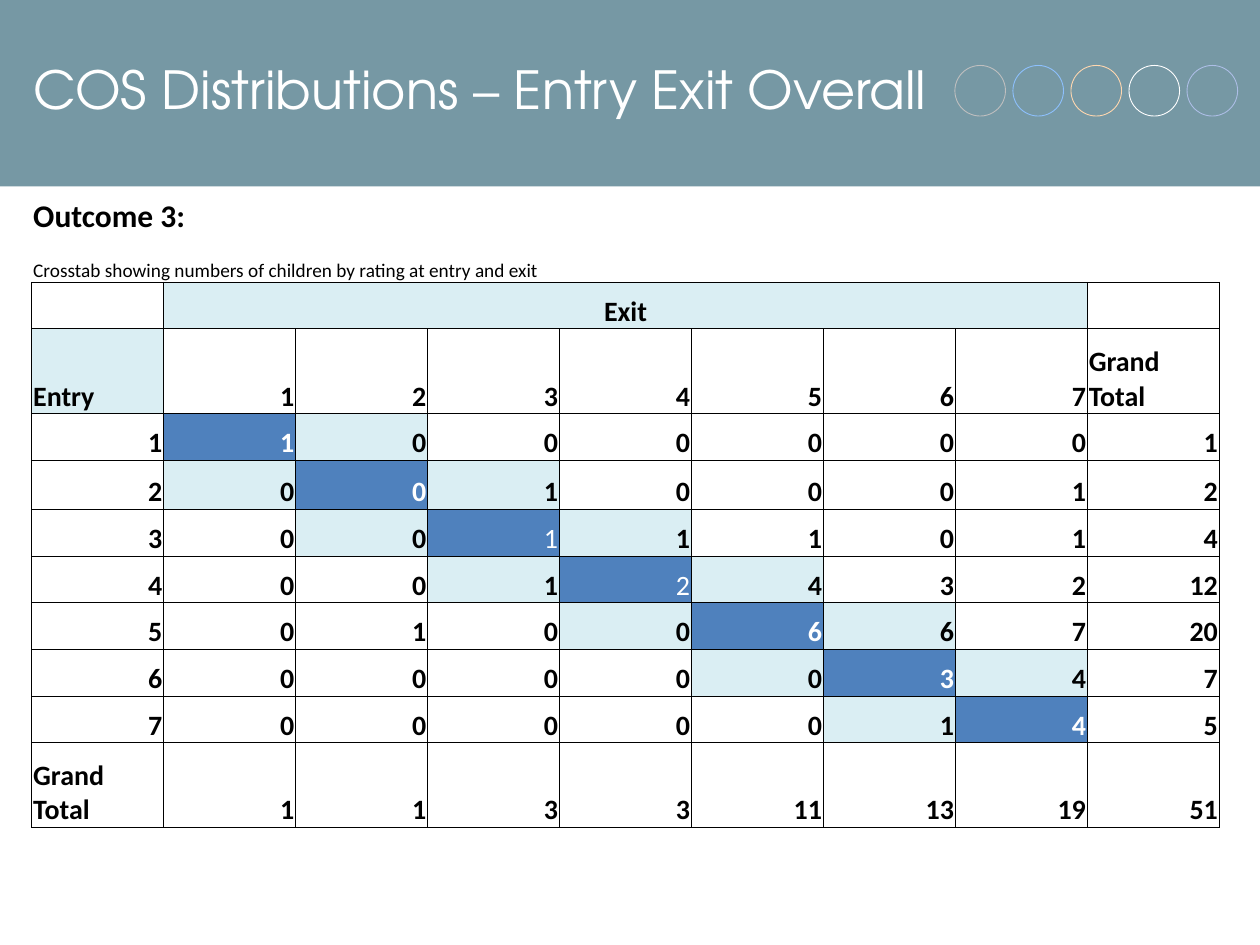
from lxml import etree
from pptx import Presentation
from pptx.dml.color import RGBColor
from pptx.enum.shapes import MSO_SHAPE as Shape
from pptx.enum.text import MSO_ANCHOR as Anchor, PP_ALIGN as Align
from pptx.oxml.ns import qn
from pptx.util import Cm, Pt

COLORS = {
    "band": "7698A4", "white": "FFFFFF", "black": "000000",
    "same": "4F81BD", "near": "DAEEF3",
    "grey": "BFBFBF", "sky": "8DC0FD", "peach": "FFD7AF", "lilac": "ADBEE6",
}
PLAIN_TABLE = "{2D5ABB26-0587-4C30-8999-92F81FD0307C}"
# Rows are ratings at entry, columns are ratings at exit.
COUNTS = [
    [1, 0, 0, 0, 0, 0, 0],
    [0, 0, 1, 0, 0, 0, 1],
    [0, 0, 1, 1, 1, 0, 1],
    [0, 0, 1, 2, 4, 3, 2],
    [0, 1, 0, 0, 6, 6, 7],
    [0, 0, 0, 0, 0, 3, 4],
    [0, 0, 0, 0, 0, 1, 4],
]
RATINGS = list(range(1, 8))
LIGHT_DIAGONAL = (3, 4)  # ratings whose diagonal count is not bold
FIRST_COUNT_ROW = 4
ROW_HEIGHTS = [0.94] * 3 + [1.71, 0.94, 0.99] + [0.94] * 5 + [1.71]
COLUMN_WIDTH = 2.66


def rgb(name):
    return RGBColor.from_string(COLORS[name])


def write(frame, text, size=16, font="Calibri", color="black", bold=True,
          align=Align.LEFT):
    para = frame.paragraphs[0]
    para.alignment = align
    span = para.add_run()
    span.text = str(text)
    span.font.size = Pt(size)
    span.font.name = font
    span.font.bold = bold
    span.font.color.rgb = rgb(color)


def add_borders(cell, sides):
    """Draw thin black lines on the given sides (in L, R, T, B order)."""
    properties = cell._tc.get_or_add_tcPr()
    for side in sides:
        line = etree.SubElement(properties, qn(f"a:ln{side}"), w=str(Pt(0.5)))
        fill = etree.SubElement(line, qn("a:solidFill"))
        etree.SubElement(fill, qn("a:srgbClr"), val=COLORS["black"])


class SlideBuilder:
    def __init__(self, slide):
        self.slide = slide

    def shape(self, kind, left, top, width, height, fill=None, line=None):
        shape = self.slide.shapes.add_shape(
            kind, Cm(left), Cm(top), Cm(width), Cm(height))
        shape.shadow.inherit = False
        if fill:
            shape.fill.solid()
            shape.fill.fore_color.rgb = rgb(fill)
        else:
            shape.fill.background()
        if line:
            shape.line.color.rgb = rgb(line)
            shape.line.width = Pt(0.5)
        else:
            shape.line.fill.background()

    def title(self, text, left, top, width, height):
        box = self.slide.shapes.add_textbox(
            Cm(left), Cm(top), Cm(width), Cm(height))
        box.text_frame.word_wrap = True
        box.text_frame.vertical_anchor = Anchor.MIDDLE
        write(box.text_frame, text, size=30, font="TeX Gyre Adventor",
              color="white", bold=False)

    def table(self, left, top, column_count):
        frame = self.slide.shapes.add_table(
            len(ROW_HEIGHTS), column_count, Cm(left), Cm(top),
            Cm(COLUMN_WIDTH * column_count), Cm(sum(ROW_HEIGHTS)))
        table = frame.table
        table.first_row = table.horz_banding = False
        table._tbl.tblPr.find(qn("a:tableStyleId")).text = PLAIN_TABLE
        for column in table.columns:
            column.width = Cm(COLUMN_WIDTH)
        for row, height in zip(table.rows, ROW_HEIGHTS):
            row.height = Cm(height)
        for cell in table.iter_cells():
            cell.margin_left = cell.margin_right = cell.margin_top = Cm(0.03)
            cell.margin_bottom = 0
            cell.vertical_anchor = Anchor.BOTTOM
        return table

    def cell(self, table, row, column, text, fill=None, **style):
        cell = table.cell(row, column)
        if fill:
            cell.fill.solid()
            cell.fill.fore_color.rgb = rgb(fill)
        write(cell.text_frame, text, **style)


def add_crosstab(builder):
    last = len(RATINGS) + 1
    table = builder.table(0.64, 3.81, last + 1)
    for row in range(1, len(ROW_HEIGHTS)):
        for column in range(last + 1):
            add_borders(table.cell(row, column), "B" if row == 1 else "LRTB")
    for row, first, end in [(0, 0, 1), (1, 0, 6), (2, 1, 7)]:
        table.cell(row, first).merge(table.cell(row, end))

    builder.cell(table, 0, 0, "Outcome 3:", size=18)
    builder.cell(table, 1, 0, "Crosstab showing numbers of children by rating "
                 "at entry and exit", size=11, bold=False)
    builder.cell(table, 2, 1, "Exit", fill="near", align=Align.CENTER)
    builder.cell(table, 3, 0, "Entry", fill="near")

    column_totals = [sum(column) for column in zip(*COUNTS)]
    lines = [RATINGS + ["Grand Total"]]
    lines += [[*counts, sum(counts)] for counts in COUNTS]
    lines += [column_totals + [sum(column_totals)]]
    for row, values in enumerate(lines, FIRST_COUNT_ROW - 1):
        entry = row - FIRST_COUNT_ROW + 1
        if entry in RATINGS:
            builder.cell(table, row, 0, entry, align=Align.RIGHT)
        for exit_rating, value in enumerate(values, 1):
            style = {"align": Align.LEFT if isinstance(value, str) else Align.RIGHT}
            if entry in RATINGS and exit_rating in RATINGS:
                distance = abs(entry - exit_rating)
                if distance == 0:
                    style.update(fill="same", color="white",
                                 bold=entry not in LIGHT_DIAGONAL)
                elif distance == 1:
                    style.update(fill="near")
            builder.cell(table, row, exit_rating, value, **style)
    builder.cell(table, len(ROW_HEIGHTS) - 1, 0, "Grand Total")


def main():
    deck = Presentation()
    deck.slide_width, deck.slide_height = Cm(25.4), Cm(19.05)
    builder = SlideBuilder(deck.slides.add_slide(deck.slide_layouts[6]))
    builder.shape(Shape.RECTANGLE, 0, -0.05, 25.4, 3.81, fill="band")
    for index, color in enumerate(["grey", "sky", "peach", "white", "lilac"]):
        builder.shape(Shape.OVAL, 19.25 + 1.17 * index, 1.32, 1.02, 1.02,
                      line=color)
    builder.title("COS Distributions – Entry Exit Overall", 0.43, 0.2, 18.62, 3.18)
    add_crosstab(builder)
    deck.save("out.pptx")


if __name__ == "__main__":
    main()
